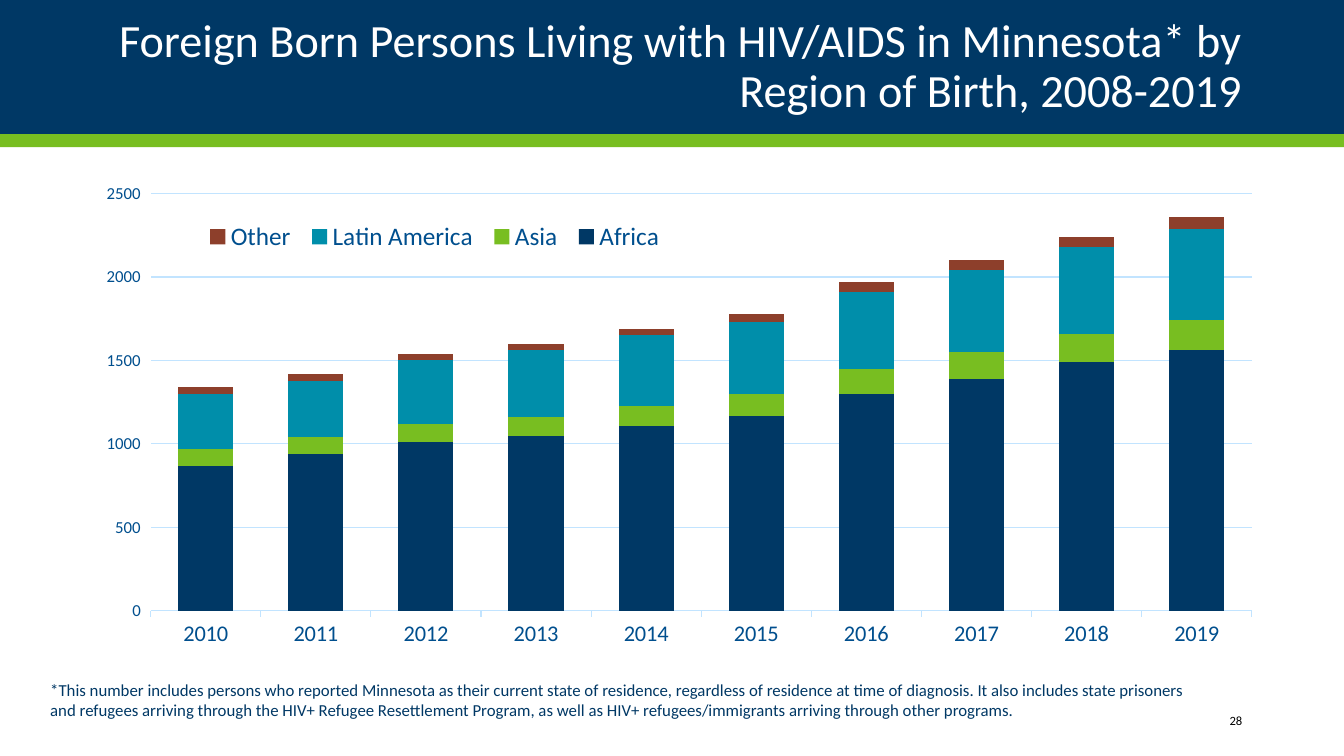
"""Build the slide on foreign born persons living with HIV/AIDS in Minnesota."""
import lxml.etree
import pptx
import pptx.chart.data
import pptx.dml.color
import pptx.enum.chart
import pptx.enum.shapes
import pptx.enum.text
import pptx.oxml.ns
import pptx.util

W, H = 13.33, 7.5
LEFT, WIDTH = 0.92, 11.5
NAVY, GREEN, TEAL, RUST = "003865", "78BE21", "008EAA", "8D3F2B"
BLUE, PALE = "004F8E", "C2E4FF"
ALIGN = pptx.enum.text.PP_ALIGN
ANCHOR = pptx.enum.text.MSO_ANCHOR
inch = pptx.util.Inches


def rgb(color):
    return pptx.dml.color.RGBColor.from_string(color)


def write(sp, text, box, size, color, align=ALIGN.LEFT, anchor=ANCHOR.TOP, spacing=None):
    sp.left, sp.top, sp.width, sp.height = map(inch, box)
    tf = sp.text_frame
    tf.word_wrap = True
    tf.auto_size = pptx.enum.text.MSO_AUTO_SIZE.NONE
    tf.vertical_anchor = anchor
    p = tf.paragraphs[0]
    p.alignment = align
    p.line_spacing = spacing
    r = p.add_run()
    r.text = text
    r.font.name = "Calibri"
    r.font.size = pptx.util.Pt(size)
    r.font.color.rgb = rgb(color)


prs = pptx.Presentation()
prs.slide_width, prs.slide_height = inch(W), inch(H)
s = prs.slides.add_slide(prs.slide_layouts[5])
title = s.shapes.title

for top, height, color in [(0, 1.33, NAVY), (1.33, 0.13, GREEN)]:
    sp = s.shapes.add_shape(pptx.enum.shapes.MSO_SHAPE.RECTANGLE,
                            0, inch(top), inch(W), inch(height))
    sp.shadow.inherit = False
    sp.fill.solid()
    sp.fill.fore_color.rgb = rgb(color)
    sp.line.fill.background()
    title.element.addprevious(sp.element)

write(title, "Foreign Born Persons Living with HIV/AIDS in Minnesota* by Region of Birth, 2008-2019",
      (LEFT, 0.17, WIDTH, 1), 33, "FFFFFF", ALIGN.RIGHT, ANCHOR.MIDDLE, 0.9)

regions = [
    ("Africa", NAVY, [870, 940, 1010, 1050, 1110, 1170, 1300, 1390, 1490, 1560]),
    ("Asia", GREEN, [100, 100, 110, 110, 120, 130, 150, 160, 170, 180]),
    ("Latin America", TEAL, [330, 340, 380, 400, 420, 430, 460, 490, 520, 550]),
    ("Other", RUST, [40, 40, 40, 40, 40, 50, 60, 60, 60, 70]),
]
data = pptx.chart.data.CategoryChartData()
data.categories = [str(year) for year in range(2010, 2020)]
for name, color, values in regions:
    data.add_series(name, values)
chart = s.shapes.add_chart(pptx.enum.chart.XL_CHART_TYPE.COLUMN_STACKED,
                           inch(LEFT), inch(1.73), inch(WIDTH), inch(4.76), data).chart
chart.has_title = False
chart.font.name = "Calibri"
chart.font.size = pptx.util.Pt(10)
chart.font.color.rgb = rgb(NAVY)

plot = chart.plots[0]
plot.gap_width, plot.overlap = 100, 100
plot.vary_by_categories = False
for series, (name, color, values) in zip(plot.series, regions):
    series.format.fill.solid()
    series.format.fill.fore_color.rgb = rgb(color)

years, counts = chart.category_axis, chart.value_axis
counts.minimum_scale, counts.maximum_scale, counts.major_unit = 0, 2500, 500
counts.has_major_gridlines = True
counts.format.line.fill.background()
for line in (years.format.line, counts.major_gridlines.format.line):
    line.color.rgb = rgb(PALE)
    line.width = pptx.util.Pt(0.75)

chart.has_legend = True
legend = chart.legend
legend.position = pptx.enum.chart.XL_LEGEND_POSITION.RIGHT
legend.include_in_layout = False
for font, size in [(years.tick_labels.font, 16), (counts.tick_labels.font, 12), (legend.font, 18)]:
    font.name = "Calibri"
    font.size = pptx.util.Pt(size)
    font.color.rgb = rgb(BLUE)

qn = pptx.oxml.ns.qn
plot_area = chart.element.find(".//" + qn("c:plotArea"))
legend_box = chart.element.find(".//" + qn("c:legend"))
for parent, index, target, shares in [
    (plot_area, 0, "inner", (0.05, 0.04, 0.95, 0.87)),
    (legend_box, 1, None, (0.09, 0.09, 0.41, 0.08)),
]:
    for old in parent.findall(qn("c:layout")):
        parent.remove(old)
    layout = lxml.etree.Element(qn("c:layout"))
    manual = lxml.etree.SubElement(layout, qn("c:manualLayout"))
    settings = [("layoutTarget", target)] if target else []
    settings += [("xMode", "edge"), ("yMode", "edge"), *zip("xywh", shares)]
    for tag, value in settings:
        lxml.etree.SubElement(manual, qn("c:" + tag)).set("val", str(value))
    parent.insert(index, layout)

write(s.shapes.add_textbox(0, 0, 0, 0),
      "*This number includes persons who reported Minnesota as their current state of residence, "
      "regardless of residence at time of diagnosis. It also includes state prisoners and refugees "
      "arriving through the HIV+ Refugee Resettlement Program, as well as HIV+ refugees/immigrants "
      "arriving through other programs.",
      (0.4, 6.69, WIDTH, 0.86), 12, NAVY)
write(s.shapes.add_textbox(0, 0, 0, 0), "28", (10.82, 6.95, 1.6, 0.4), 9, "000000",
      ALIGN.RIGHT, ANCHOR.MIDDLE)

prs.save("out.pptx")
